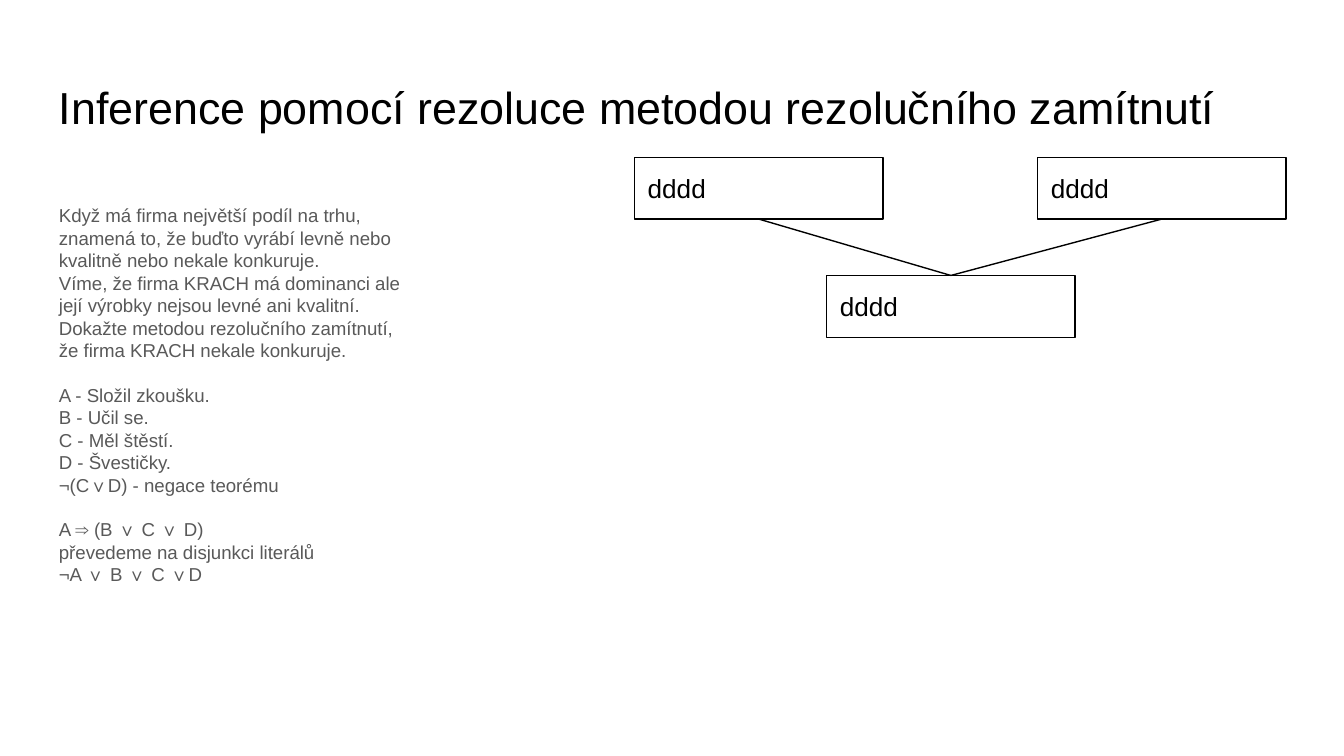
from dataclasses import dataclass

from lxml.etree import SubElement
from pptx import Presentation
from pptx.dml.color import RGBColor
from pptx.enum.shapes import MSO_CONNECTOR as Connector, MSO_SHAPE as Shape
from pptx.enum.text import MSO_ANCHOR as Anchor, PP_ALIGN as Align
from pptx.oxml.ns import qn
from pptx.util import Inches, Pt


@dataclass(frozen=True)
class Theme:
    font: str = "Arial"
    black: RGBColor = RGBColor(0x00, 0x00, 0x00)
    grey: RGBColor = RGBColor(0x59, 0x59, 0x59)
    title_size: float = 24
    body_size: float = 10
    clause_size: float = 14
    line_width: float = 0.75
    group_gap: float = 12
    inset: float = 0.1


@dataclass(frozen=True)
class Clause:
    text: str
    left: float
    top: float
    width: float = 1.85
    height: float = 0.46


THEME = Theme()
BOTTOM, TOP = 2, 0

TITLE = "Inference pomocí rezoluce metodou rezolučního zamítnutí"
# Each group of lines is set apart by a gap
BODY_GROUPS = [
    [
        "Když má firma největší podíl na trhu, znamená to, že buďto vyrábí "
        "levně nebo kvalitně nebo nekale konkuruje.",
        "Víme, že firma KRACH má dominanci ale její výrobky nejsou levné ani kvalitní.",
        "Dokažte metodou rezolučního zamítnutí, že firma KRACH nekale konkuruje.",
    ],
    [
        "A - Složil zkoušku.",
        "B - Učil se.",
        "C - Měl štěstí.",
        "D - Švestičky.",
        "¬(C∨D) - negace teorému",
    ],
    [
        "A ⇒ (B ∨ C ∨ D)",
        "převedeme na disjunkci literálů",
        "¬A ∨ B ∨ C ∨D",
    ],
]
PARENTS = [Clause("dddd", 4.72, 1.17), Clause("dddd", 7.72, 1.17)]
RESOLVENT = Clause("dddd", 6.15, 2.05)


def set_frame(frame, anchor: Anchor, top_inset: float = THEME.inset) -> None:
    inset = Inches(THEME.inset)
    formats = {
        "word_wrap": True,
        "vertical_anchor": anchor,
        "margin_left": inset,
        "margin_right": inset,
        "margin_top": Inches(top_inset),
        "margin_bottom": inset,
    }
    for name, value in formats.items():
        setattr(frame, name, value)


def write(paragraph, text: str, size: float, color: RGBColor) -> None:
    paragraph.alignment = Align.LEFT
    run = paragraph.add_run()
    run.text = text
    for name, value in {"name": THEME.font, "size": Pt(size)}.items():
        setattr(run.font, name, value)
    run.font.color.rgb = color


def set_line(line) -> None:
    line.color.rgb = THEME.black
    line.width = Pt(THEME.line_width)


def add_title(slide) -> None:
    box = slide.shapes.add_textbox(Inches(0.34), Inches(0.49), Inches(9.32), Inches(0.63))
    set_frame(box.text_frame, Anchor.TOP)
    write(box.text_frame.paragraphs[0], TITLE, THEME.title_size, THEME.black)


def add_body(slide) -> None:
    box = slide.shapes.add_textbox(Inches(0.34), Inches(1.26), Inches(2.86), Inches(3.74))
    frame = box.text_frame
    set_frame(frame, Anchor.TOP, top_inset=0.26)
    for group_no, group in enumerate(BODY_GROUPS):
        for line_no, text in enumerate(group):
            first = group_no == line_no == 0
            paragraph = frame.paragraphs[0] if first else frame.add_paragraph()
            paragraph.line_spacing = 1.0
            starts_group = line_no == 0 and not first
            paragraph.space_before = Pt(THEME.group_gap if starts_group else 0)
            write(paragraph, text, THEME.body_size, THEME.grey)


def add_clause(slide, clause: Clause):
    box = slide.shapes.add_shape(
        Shape.RECTANGLE,
        Inches(clause.left), Inches(clause.top),
        Inches(clause.width), Inches(clause.height),
    )
    box.shadow.inherit = False
    box.fill.background()
    set_line(box.line)
    set_frame(box.text_frame, Anchor.MIDDLE)
    write(box.text_frame.paragraphs[0], clause.text, THEME.clause_size, THEME.black)
    return box


def join(slide, parent, resolvent) -> None:
    link = slide.shapes.add_connector(Connector.STRAIGHT, 0, 0, 0, 0)
    link.begin_connect(parent, BOTTOM)
    link.end_connect(resolvent, TOP)
    set_line(link.line)
    SubElement(link.element.spPr, qn("a:effectLst"))


def main() -> None:
    deck = Presentation()
    # A 16:9 page
    deck.slide_width = Inches(10)
    deck.slide_height = Inches(10 * 9 / 16)
    slide = deck.slides.add_slide(deck.slide_layouts[6])

    # Title and problem statement
    add_title(slide)
    add_body(slide)

    # Resolution tree
    parents = [add_clause(slide, parent) for parent in PARENTS]
    resolvent = add_clause(slide, RESOLVENT)
    for parent in parents:
        join(slide, parent, resolvent)

    deck.save("out.pptx")


if __name__ == "__main__":
    main()
